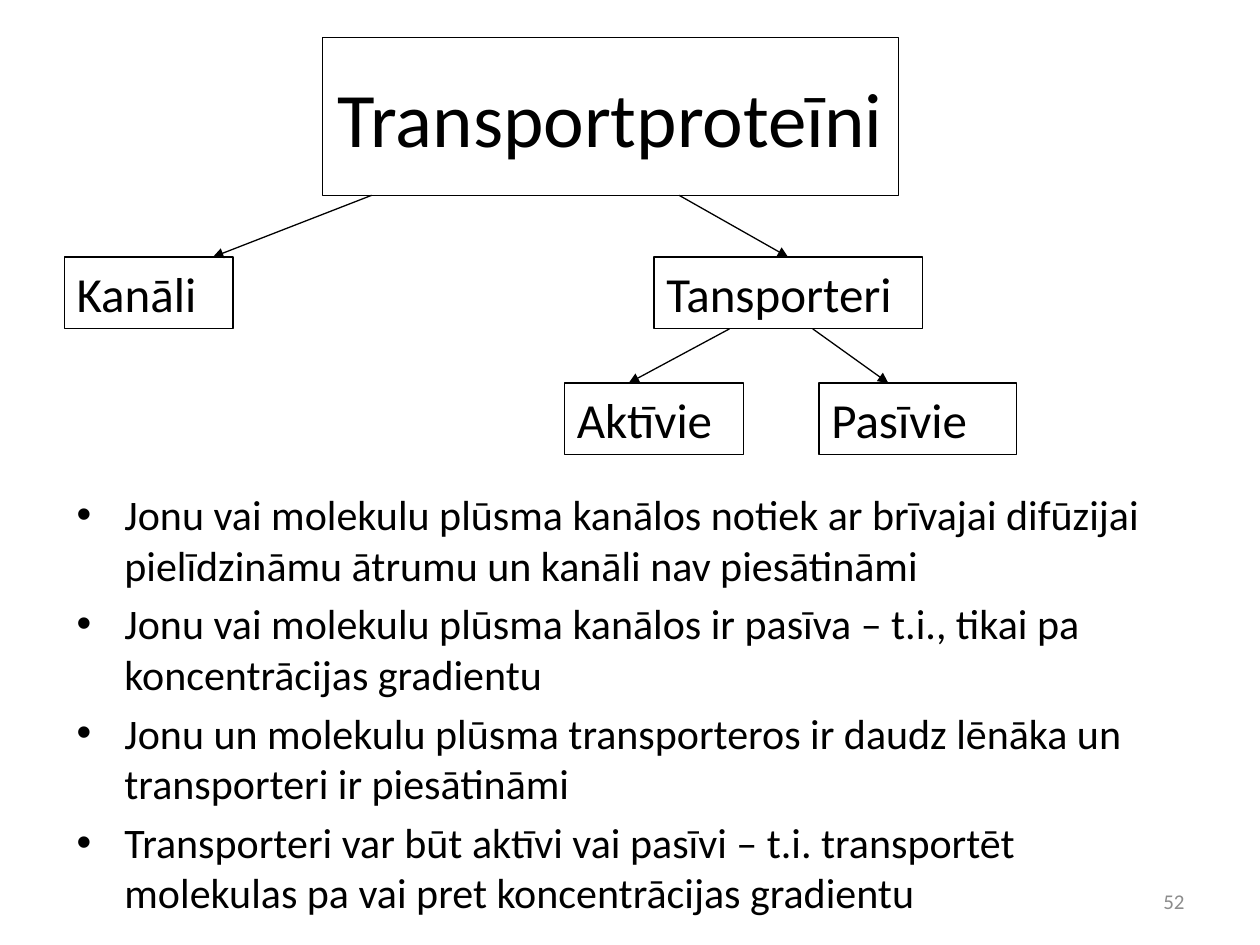
"""Build a slide classifying transport proteins, with four notes on their behaviour."""
from lxml import etree
from pptx import Presentation
from pptx.dml.color import RGBColor
from pptx.enum.shapes import MSO_CONNECTOR
from pptx.enum.text import MSO_ANCHOR, MSO_AUTO_SIZE, PP_ALIGN
from pptx.oxml.ns import qn
from pptx.util import Inches, Pt

STRAIGHT = MSO_CONNECTOR.STRAIGHT
MIDDLE = MSO_ANCHOR.MIDDLE
GROW = MSO_AUTO_SIZE.SHAPE_TO_FIT_TEXT
LEFT, CENTER, RIGHT = PP_ALIGN.LEFT, PP_ALIGN.CENTER, PP_ALIGN.RIGHT
COLORS = {"ink": "000000", "page_number": "8C8C8C"}
TITLE_BOTTOM, CLASS_TOP, CLASS_BOTTOM, KIND_TOP = 1.55, 2.04, 2.61, 3.04
BOX_HEIGHT = 0.57


def style_text(paragraph, size, color="ink", align=LEFT):
    paragraph.alignment = align
    paragraph.font.size = Pt(size)
    paragraph.font.name = "Calibri"
    paragraph.font.color.rgb = RGBColor.from_string(COLORS[color])


def style_line(line):
    line.color.rgb = RGBColor.from_string(COLORS["ink"])
    line.width = Pt(0.75)


prs = Presentation()
prs.slide_width, prs.slide_height = Inches(10), Inches(7.5)
slide = prs.slides.add_slide(prs.slide_layouts[5])

title = slide.shapes.title
title.left, title.top = Inches(2.56), Inches(0.3)
title.width, title.height = Inches(4.57), Inches(1.25)
title.text_frame.text = "Transportproteīni"
title.text_frame.vertical_anchor = MIDDLE
style_text(title.text_frame.paragraphs[0], 44, align=CENTER)
style_line(title.line)

notes = [
    "Jonu vai molekulu plūsma kanālos notiek ar brīvajai difūzijai pielīdzināmu ātrumu un kanāli nav piesātināmi",
    "Jonu vai molekulu plūsma kanālos ir pasīva – t.i., tikai pa koncentrācijas gradientu",
    "Jonu un molekulu plūsma transporteros ir daudz lēnāka un transporteri ir piesātināmi",
    "Transporteri var būt aktīvi vai pasīvi – t.i. transportēt molekulas pa vai pret koncentrācijas gradientu",
]
notes_frame = slide.shapes.add_textbox(Inches(0.51), Inches(3.83), Inches(9), Inches(3.59)).text_frame
notes_frame.word_wrap = True
notes_frame.text = "\n".join(notes)
for note in notes_frame.paragraphs:
    style_text(note, 24)
    note.space_before = Pt(4.8)
    properties = note._p.get_or_add_pPr()
    properties.set("marL", str(Inches(0.38)))
    properties.set("indent", str(Inches(-0.38)))
    bullet_font = etree.Element(qn("a:buFont"), typeface="Arial")
    bullet = etree.Element(qn("a:buChar"), char="•")
    properties.find(qn("a:spcBef")).addnext(bullet_font)
    bullet_font.addnext(bullet)

boxes = {}
for label, left, top, width in [
    ("Kanāli", 0.51, CLASS_TOP, 1.34),
    ("Tansporteri", 5.19, CLASS_TOP, 2.13),
    ("Aktīvie", 4.48, KIND_TOP, 1.42),
    ("Pasīvie", 6.5, KIND_TOP, 1.57),
]:
    box = slide.shapes.add_textbox(Inches(left), Inches(top), Inches(width), Inches(BOX_HEIGHT))
    box.text_frame.word_wrap = True
    box.text_frame.auto_size = GROW
    box.text_frame.text = label
    style_text(box.text_frame.paragraphs[0], 28)
    style_line(box.line)
    boxes[label] = box

arrows = {}
for target, start_x, start_y, end_x, end_y in [
    ("Kanāli", 2.95, TITLE_BOTTOM, 1.69, CLASS_TOP),
    ("Aktīvie", 5.79, CLASS_BOTTOM, 4.99, KIND_TOP),
    ("Tansporteri", 5.39, TITLE_BOTTOM, 6.25, CLASS_TOP),
    ("Pasīvie", 6.45, CLASS_BOTTOM, 7.05, KIND_TOP),
]:
    arrow = slide.shapes.add_connector(
        STRAIGHT, Inches(start_x), Inches(start_y), Inches(end_x), Inches(end_y))
    style_line(arrow.line)
    etree.SubElement(arrow.line._get_or_add_ln(), qn("a:tailEnd"), type="triangle")
    etree.SubElement(arrow._element.spPr, qn("a:effectLst"))
    arrows[target] = arrow
arrows["Tansporteri"].end_connect(boxes["Tansporteri"], 0)

page_frame = slide.shapes.add_textbox(Inches(7.17), Inches(6.95), Inches(2.33), Inches(0.4)).text_frame
page_frame.word_wrap = True
page_frame.vertical_anchor = MIDDLE
page_frame.text = "52"
style_text(page_frame.paragraphs[0], 12, "page_number", RIGHT)

prs.save("out.pptx")
